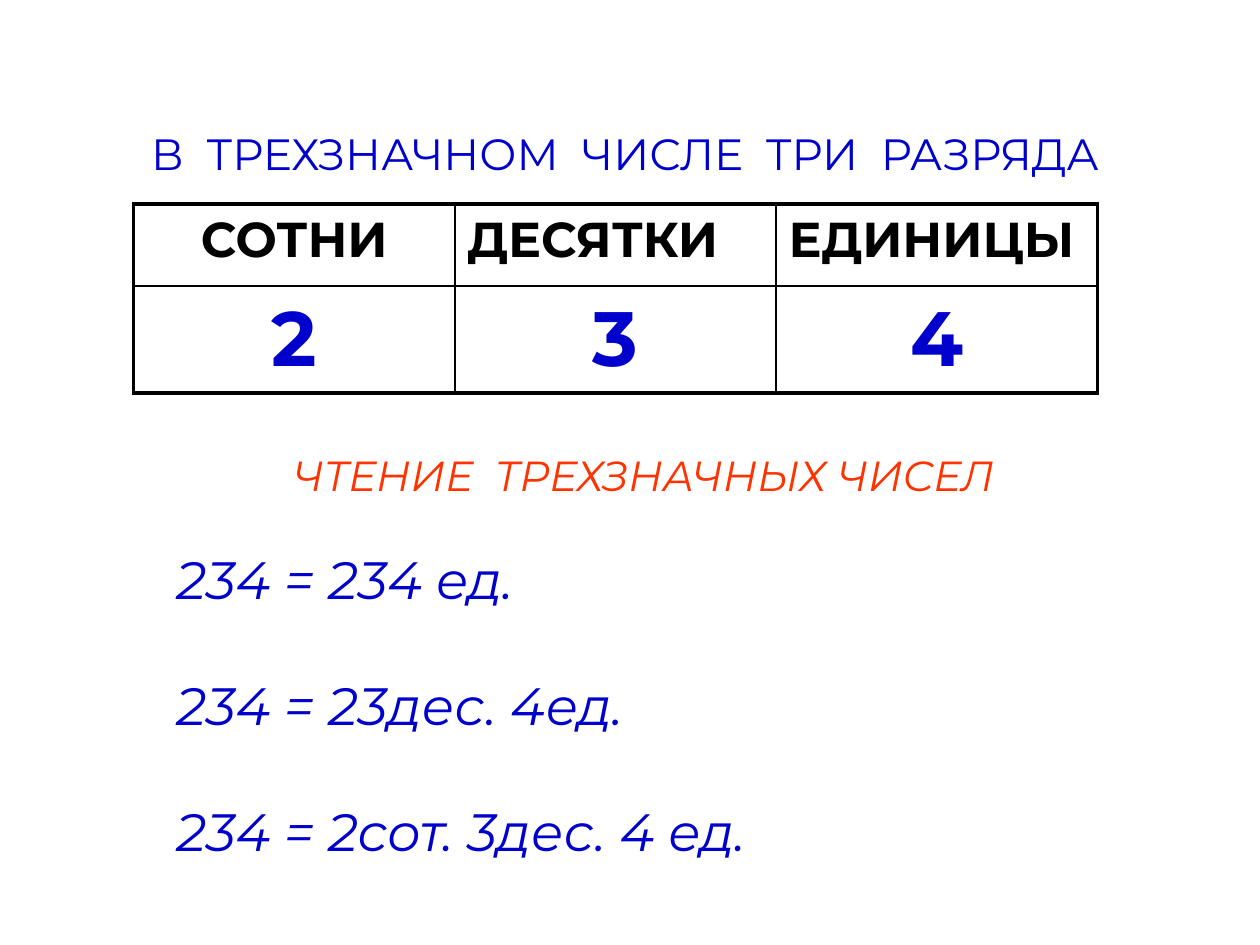
import pptx
import pptx.dml.color
import pptx.enum.text
import pptx.oxml
import pptx.oxml.ns
import pptx.util
from pptx.util import Pt

COLORS = {"blue": "0000CC", "red": "FF3300", "black": "000000"}
FONT = "Montserrat"
CENTER = pptx.enum.text.PP_ALIGN.CENTER
LEFT = pptx.enum.text.PP_ALIGN.LEFT
ROWS = [("СОТНИ", "ДЕСЯТКИ", "ЕДИНИЦЫ"), ("2", "3", "4")]
ROW_HEIGHTS = (46.8, 61.2)
COLUMN_WIDTH = 183.6
READINGS = ["234 = 234 ед.", "234 = 23дес. 4ед.", "234 = 2сот. 3дес. 4 ед."]


def format_text(paragraph, size, color, alignment=LEFT, bold=False, italic=False):
    """Style a paragraph's alignment and runs."""
    paragraph.alignment = alignment
    paragraph.space_before = Pt(0)
    for run in paragraph.runs:
        run.font.name = FONT
        run.font.size = Pt(size)
        run.font.bold = bold
        run.font.italic = italic
        run.font.color.rgb = pptx.dml.color.RGBColor.from_string(COLORS[color])


def place(shape, left, top, width, height):
    """Position a text shape and anchor its text at the top."""
    shape.left, shape.top = Pt(left), Pt(top)
    shape.width, shape.height = Pt(width), Pt(height)
    frame = shape.text_frame
    frame.word_wrap = True
    frame.auto_size = pptx.enum.text.MSO_AUTO_SIZE.NONE
    frame.vertical_anchor = pptx.enum.text.MSO_ANCHOR.TOP


def add_heading(shape, text, size, color, box, italic=False):
    """Fill a shape with one centred heading line."""
    place(shape, *box)
    shape.text_frame.text = text
    format_text(shape.text_frame.paragraphs[0], size, color, CENTER, italic=italic)


def add_border(cell, side, width):
    """Add one solid black border to a cell."""
    cell._tc.get_or_add_tcPr().append(pptx.oxml.parse_xml(
        f'<a:ln{side} {pptx.oxml.ns.nsdecls("a")} w="{Pt(width)}"><a:solidFill>'
        f'<a:srgbClr val="{COLORS["black"]}"/></a:solidFill></a:ln{side}>'))


def add_place_table(slide):
    """Add the table of hundreds, tens and units."""
    row_count, column_count = len(ROWS), len(ROWS[0])
    table = slide.shapes.add_table(
        row_count, column_count, Pt(76.32), Pt(116.64),
        Pt(COLUMN_WIDTH * column_count), Pt(sum(ROW_HEIGHTS))).table
    table.first_row = table.horz_banding = False
    for column in table.columns:
        column.width = Pt(COLUMN_WIDTH)
    for r, (texts, height) in enumerate(zip(ROWS, ROW_HEIGHTS)):
        table.rows[r].height = Pt(height)
        for c, text in enumerate(texts):
            cell = table.cell(r, c)
            outer_sides = {"L": c == 0, "R": c == column_count - 1,
                           "T": r == 0, "B": r == row_count - 1}
            for side, outer in outer_sides.items():
                add_border(cell, side, 2.25 if outer else 1)
            cell.fill.background()
            cell.text_frame.text = text
            size, color = (28, "black") if r == 0 else (44, "blue")
            alignment = LEFT if r == 0 and c > 0 else CENTER
            format_text(cell.text_frame.paragraphs[0], size, color, alignment, bold=True)


def add_readings(shape):
    """Fill the body with the ways of reading the number."""
    place(shape, 93.6, 308.88, 403.92, 187.2)
    shape.text_frame.text = "\n".join(READINGS)
    for index, paragraph in enumerate(shape.text_frame.paragraphs):
        properties = paragraph._p.get_or_add_pPr()
        properties.set("marL", "0")
        properties.set("indent", "0")
        properties.append(pptx.oxml.parse_xml(
            f'<a:buNone {pptx.oxml.ns.nsdecls("a")}/>'))
        format_text(paragraph, 30, "blue", italic=True)
        if index:
            paragraph.space_before = Pt(36)


def main():
    """Build and save the slide."""
    presentation = pptx.Presentation()
    presentation.slide_width, presentation.slide_height = Pt(720), Pt(540)
    slide = presentation.slides.add_slide(presentation.slide_layouts[1])
    add_heading(slide.shapes.title, "В  ТРЕХЗНАЧНОМ  ЧИСЛЕ  ТРИ  РАЗРЯДА",
                25, "blue", (42.5, 69.12, 629.3, 37.44))
    add_place_table(slide)
    subtitle = slide.shapes.add_textbox(0, 0, 0, 0)
    add_heading(subtitle, "ЧТЕНИЕ  ТРЕХЗНАЧНЫХ ЧИСЕЛ",
                24, "red", (130.5, 253.44, 474.5, 36), italic=True)
    add_readings(slide.placeholders[1])
    presentation.save("out.pptx")


if __name__ == "__main__":
    main()
